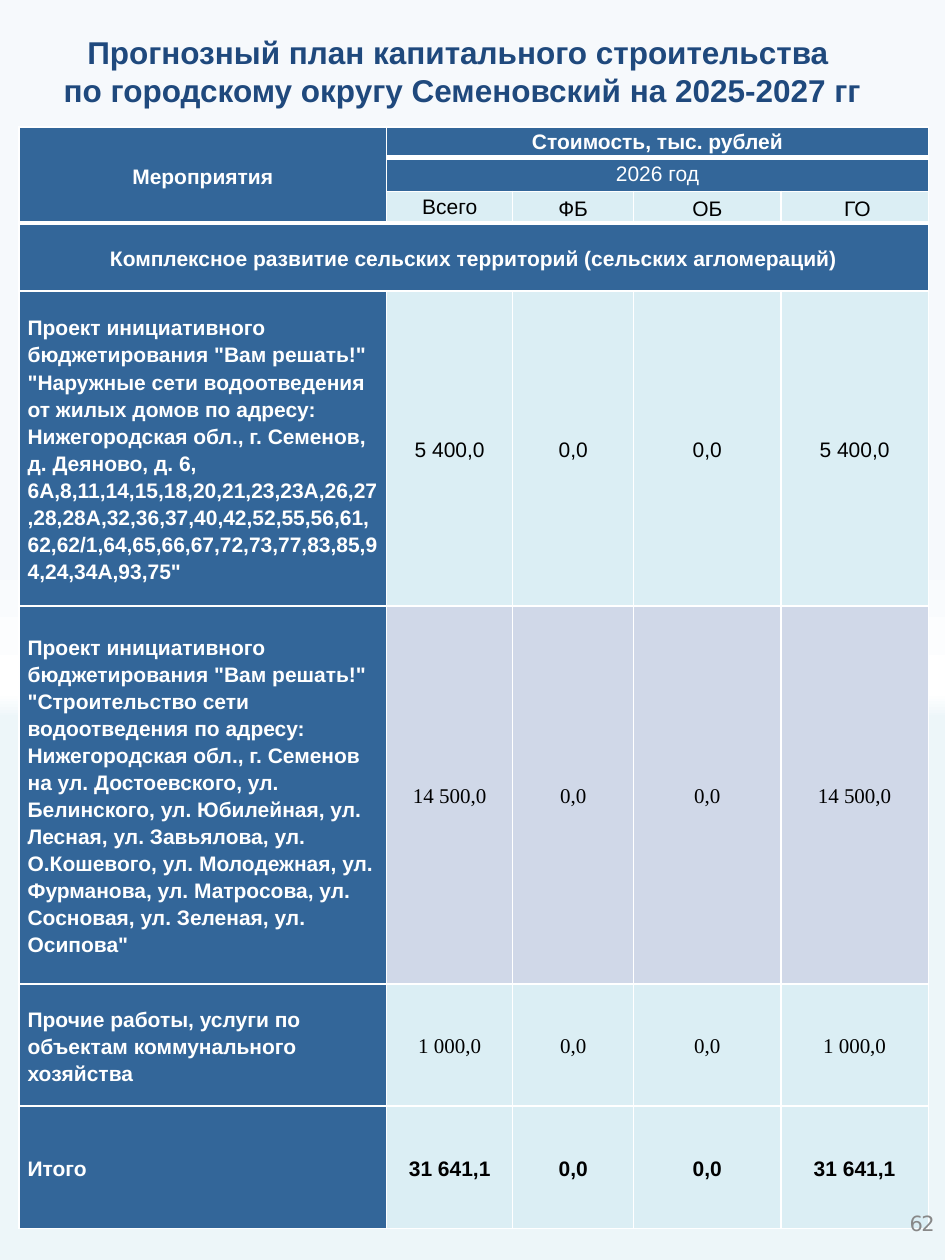
from lxml.etree import SubElement
from pptx import Presentation
from pptx.dml.color import RGBColor
from pptx.enum.text import MSO_ANCHOR as Anchor, MSO_AUTO_SIZE as AutoSize, PP_ALIGN as Align
from pptx.oxml.ns import qn
from pptx.util import Pt

NAVY, BLUE, WHITE, BLACK, GRAY = "1F497D", "336699", "FFFFFF", "000000", "888888"
ICE, LAVENDER = "DBEEF4", "D0D8E8"
SANS, SERIF, NUMBER_FONT = "Arial", "Times New Roman", "DejaVu Sans"

BACKGROUND = [(21, "F6F9FC"), (43, "F6F9FC"), (55, WHITE),
              (57, "EDF6F9"), (63, "EDF6F9"), (95, "EDF6F9")]
TITLE = ["Прогнозный план капитального строительства ",
         "по городскому округу Семеновский на 2025-2027 гг"]
COLUMNS = [210.2, 72, 69.1, 84.2, 84.2]
ROWS = [17.3, 19.4, 18, 38.9, 180, 216, 69.8, 69.8]
SOURCES = ["Всего", "ФБ", "ОБ", " ГО"]
# name, total, number font, bold numbers, fill
PROJECTS = [
    ('Проект инициативного бюджетирования "Вам решать!" "Наружные сети водоотведения '
     'от жилых домов по адресу: Нижегородская обл., г. Семенов, д. Деяново, д. 6, '
     '6А,8,11,14,15,18,20,21,23,23А,26,27,28,28А,32,36,37,40,42,52,55,56,61,62,62/1,'
     '64,65,66,67,72,73,77,83,85,94,24,34А,93,75"', 5400, SANS, False, ICE),
    ('Проект инициативного бюджетирования "Вам решать!" "Строительство сети '
     'водоотведения по адресу: Нижегородская обл., г. Семенов на ул. Достоевского, '
     'ул. Белинского, ул. Юбилейная, ул. Лесная, ул. Завьялова, ул. О.Кошевого, '
     'ул. Молодежная, ул. Фурманова, ул. Матросова, ул. Сосновая, ул. Зеленая, '
     'ул. Осипова"', 14500, SERIF, False, LAVENDER),
    ("Прочие работы, услуги по объектам коммунального хозяйства", 1000, SERIF, False, ICE),
    ("Итого", 31641.1, SANS, True, ICE),
]


def color(hex_string):
    return RGBColor.from_string(hex_string)


def amount(value):
    """Format with a no-break space for thousands and a decimal comma."""
    return f"{value:,.1f}".replace(",", " ").replace(".", ",")


class SlideBuilder:
    """Holds the text style and the current slide."""

    def __init__(self, page, size=12, font=SANS):
        self.page, self.size, self.font = page, size, font

    def style(self, para, ink, bold=False, font=None, size=None, align=Align.CENTER):
        para.alignment = align
        para.font.name = font or self.font
        para.font.size = Pt(size or self.size)
        para.font.bold = bold
        para.font.color.rgb = color(ink)

    def background(self, stops):
        fill = self.page.background.fill
        fill.gradient()
        fill.gradient_angle = 270
        stop_list = self.page.element.find(".//" + qn("a:gsLst"))
        for old in list(stop_list):
            stop_list.remove(old)
        for percent, shade in stops:
            stop = SubElement(stop_list, qn("a:gs"), pos=str(percent * 1000))
            SubElement(stop, qn("a:srgbClr"), val=shade)

    def title(self, lines, left, top, width, height):
        box = self.page.shapes.title
        box.left, box.top, box.width, box.height = map(Pt, (left, top, width, height))
        frame = box.text_frame
        frame.text = "\n".join(lines)
        frame.word_wrap = True
        frame.auto_size = AutoSize.SHAPE_TO_FIT_TEXT
        frame.vertical_anchor = Anchor.MIDDLE
        for para in frame.paragraphs:
            self.style(para, NAVY, bold=True, size=18)
            props = para._p.get_or_add_pPr()
            props.set("marL", "0")
            props.set("indent", str(Pt(35.3)))

    def table(self, left, top, columns, rows):
        frame = self.page.shapes.add_table(len(rows), len(columns), Pt(left), Pt(top),
                                           Pt(sum(columns)), Pt(sum(rows)))
        table = frame.table
        table.first_row = table.horz_banding = False
        for column, width in zip(table.columns, columns):
            column.width = Pt(width)
        for row, height in zip(table.rows, rows):
            row.height = Pt(height)
        return table

    def borders(self, cell, bottom=1):
        props = cell._tc.get_or_add_tcPr()
        for side, width in (("L", 1), ("R", 1), ("T", 1), ("B", bottom)):
            line = SubElement(props, qn("a:ln" + side), w=str(Pt(width)))
            SubElement(SubElement(line, qn("a:solidFill")), qn("a:srgbClr"), val=WHITE)

    def cell(self, cell, text, fill, ink=WHITE, side=2.2, loose=True, **style):
        cell.fill.solid()
        cell.fill.fore_color.rgb = color(fill)
        cell.margin_left = cell.margin_right = Pt(side)
        cell.margin_top = cell.margin_bottom = 0
        cell.vertical_anchor = Anchor.MIDDLE
        cell.text = text
        para = cell.text_frame.paragraphs[0]
        self.style(para, ink, **style)
        if loose:
            para.line_spacing = 1.15
            para.space_after = Pt(10)

    def page_number(self, text, left, top, width, height):
        box = self.page.shapes.add_textbox(*map(Pt, (left, top, width, height)))
        frame = box.text_frame
        frame.word_wrap = True
        frame.auto_size = AutoSize.SHAPE_TO_FIT_TEXT
        frame.margin_left = frame.margin_right = frame.margin_top = frame.margin_bottom = 0
        para = frame.paragraphs[0]
        span = para.add_run()
        span.text = text
        self.style(para, GRAY, font=NUMBER_FONT, align=Align.LEFT)
        para.space_before = Pt(1.6)
        para._p.get_or_add_pPr().set("marL", str(Pt(4.3)))
        span._r.get_or_add_rPr().set("spc", "-100")


def main():
    deck = Presentation()
    deck.slide_width, deck.slide_height = Pt(540), Pt(720)
    builder = SlideBuilder(deck.slides.add_slide(deck.slide_layouts[5]))
    builder.background(BACKGROUND)
    builder.title(TITLE, -37.4, 15.1, 568, 51.1)

    plan = builder.table(10.8, 72.7, COLUMNS, ROWS)
    thick = {(row, 0) for row in range(3)} | {(0, col) for col in range(1, 5)}
    for row in range(len(ROWS)):
        for col in range(len(COLUMNS)):
            builder.borders(plan.cell(row, col), bottom=3 if (row, col) in thick else 1)
    for first, last in (((0, 0), (2, 0)), ((0, 1), (0, 4)),
                        ((1, 1), (1, 4)), ((3, 0), (3, 4))):
        plan.cell(*first).merge(plan.cell(*last))

    builder.cell(plan.cell(0, 0), "Мероприятия", BLUE, bold=True)
    builder.cell(plan.cell(0, 1), "Стоимость, тыс. рублей", BLUE, loose=False, bold=True)
    builder.cell(plan.cell(1, 1), "2026 год", BLUE, loose=False)
    for col, source in enumerate(SOURCES, 1):
        builder.cell(plan.cell(2, col), source, ICE, BLACK, loose=col > 1)
    builder.cell(plan.cell(3, 0), "Комплексное развитие сельских территорий "
                 "(сельских агломераций)", BLUE, bold=True)
    for row, (name, total, font, bold, fill) in enumerate(PROJECTS, 4):
        builder.cell(plan.cell(row, 0), name, BLUE, side=5, bold=True, align=Align.LEFT)
        for col, value in enumerate((total, 0, 0, total), 1):
            builder.cell(plan.cell(row, col), amount(value), fill, BLACK, side=5,
                         font=font, bold=bold)

    builder.page_number("62", 515.5, 691.9, 22.3, 18)
    deck.save("out.pptx")


if __name__ == "__main__":
    main()
